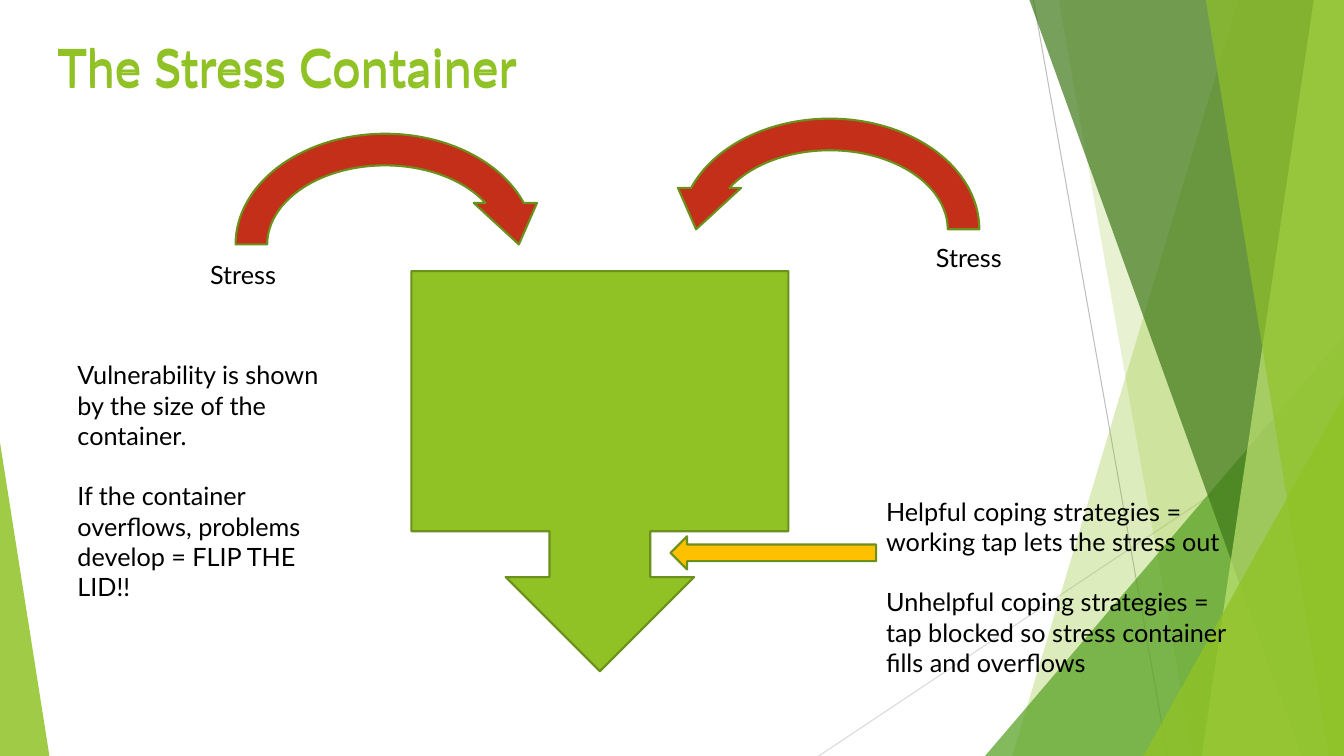
from pptx import Presentation
from pptx.dml.color import RGBColor
from pptx.enum.shapes import MSO_CONNECTOR, MSO_SHAPE
from pptx.enum.text import MSO_ANCHOR, MSO_AUTO_SIZE, PP_ALIGN
from pptx.oxml.ns import qn
from pptx.util import Inches, Pt
from lxml import etree

WIDTH, HEIGHT = 13.33, 7.5
FONT = "Lato"
GREEN, EDGE, RED, AMBER, BLACK = "90C226", "6B901C", "C42F1A", "FFC000", "000000"
LEFT, CENTER = PP_ALIGN.LEFT, PP_ALIGN.CENTER
TRIANGLE = MSO_SHAPE.ISOSCELES_TRIANGLE
CALLOUT = MSO_SHAPE.DOWN_ARROW_CALLOUT
CURVED_ARROW = MSO_SHAPE.CIRCULAR_ARROW
RIGHT_ARROW = MSO_SHAPE.RIGHT_ARROW

TITLE = "The Stress Container"
TITLE_BOX = (0.47, 0.33, 9.4, 1.44)
TITLE_OVERLAY = (0.47, 0.3, 9.4, 1.44)

# from, to, colour
RAYS = [
    ((10.25, 0), (11.58, HEIGHT), "BFBFBF"),
    ((WIDTH, 4.03), (8.12, HEIGHT), "D9D9D9"),
]
# Bands reach the right edge: x at the top, x at the bottom, colour, opacity
# Corners are triangles: place, apex, colour, opacity
BANDS_AND_CORNERS = [
    (12.28, 10.04, GREEN, 30),
    (10.5, 11.83, GREEN, 20),
    ((9.77, 3.33, 3.56, 4.17), 1, "54A021", 72),
    (10.21, 12.91, "3F7819", 70),
    (13.03, 11.92, "C0E474", 70),
    (11.96, 13.18, GREEN, 65),
    ((11.34, 3.93, 1.99, 3.57), 1, GREEN, 80),
    ((0, 4.39, 0.49, 3.11), 0, GREEN, 85),
]
# preset, place, colour, adjustments, mirrored
DIAGRAM = [
    (CALLOUT, (4.08, 2.69, 3.74, 3.97), GREEN, (0.267, 0.25, 0.25, 0.65), False),
    (CURVED_ARROW, (2.18, 1.17, 3.28, 2.51), RED, (), False),
    (CURVED_ARROW, (6.59, 1.02, 3.28, 2.51), RED, (), True),
    (RIGHT_ARROW, (6.65, 5.32, 2.04, 0.33), AMBER, (), True),
]
# place, alignment, wrap, paragraphs
LABELS = [
    ((1, 2.52, 2.82, 0.4), CENTER, True, ["Stress"]),
    ((9.18, 2.36, 0.86, 0.4), CENTER, False, ["Stress"]),
    ((8.69, 4.87, 3.62, 1.92), LEFT, True, [
        "Helpful coping strategies = working tap lets the stress out",
        "Unhelpful coping strategies = tap blocked so stress container fills and overflows",
    ]),
    ((0.67, 3.52, 2.88, 2.52), LEFT, True, [
        "Vulnerability is shown by the size of the container.",
        "If the container overflows, problems develop = FLIP THE LID!!",
    ]),
]


def color(value):
    return RGBColor.from_string(value)


def inches(place):
    return [Inches(length) for length in place]


def paint(shape, fill, opacity=100, edge=None):
    shape.shadow.inherit = False
    shape.fill.solid()
    shape.fill.fore_color.rgb = color(fill)
    if opacity < 100:
        srgb = shape._element.spPr.find(".//" + qn("a:srgbClr"))
        etree.SubElement(srgb, qn("a:alpha"), val=str(opacity * 1000))
    if edge:
        shape.line.color.rgb = color(edge)
        shape.line.width = Pt(1.5)
    else:
        shape.line.fill.background()


def write(box, lines, size, ink, align=LEFT, wrap=True):
    frame = box.text_frame
    frame.word_wrap = wrap
    frame.auto_size = MSO_AUTO_SIZE.NONE
    frame.vertical_anchor = MSO_ANCHOR.TOP
    for index, line in enumerate(lines):
        para = frame.add_paragraph() if index else frame.paragraphs[0]
        para.alignment = align
        para.space_before = Pt(size * 1.2 if index else 0)  # one empty line
        span = para.add_run()
        span.text = line
        span.font.name = FONT
        span.font.size = Pt(size)
        span.font.color.rgb = color(ink)


def add_ray(shapes, start, end, ink):
    ray = shapes.add_connector(MSO_CONNECTOR.STRAIGHT, *inches(start + end))
    ray.line.color.rgb = color(ink)
    ray.line.width = Pt(0.75)
    etree.SubElement(ray._element.spPr, qn("a:effectLst"))


def add_band(shapes, top, bottom):
    outline = shapes.build_freeform(Inches(top), 0)
    corners = [(WIDTH, 0), (WIDTH, HEIGHT), (bottom, HEIGHT)]
    outline.add_line_segments([inches(corner) for corner in corners], close=True)
    return outline.convert_to_shape()


def add_corner(shapes, place, apex):
    corner = shapes.add_shape(TRIANGLE, *inches(place))
    corner.adjustments[0] = apex
    return corner


def main():
    deck = Presentation()
    deck.slide_width, deck.slide_height = inches((WIDTH, HEIGHT))
    slide = deck.slides.add_slide(deck.slide_layouts[5])
    shapes = slide.shapes

    for start, end, ink in RAYS:
        add_ray(shapes, start, end, ink)
    for first, second, fill, opacity in BANDS_AND_CORNERS:
        add = add_corner if isinstance(first, tuple) else add_band
        paint(add(shapes, first, second), fill, opacity)

    title = shapes.title
    title.left, title.top, title.width, title.height = inches(TITLE_BOX)
    shapes._spTree.append(title._element)  # in front of the decoration
    overlay = shapes.add_textbox(*inches(TITLE_OVERLAY))
    for box in (title, overlay):
        write(box, [TITLE], 36, GREEN)

    for preset, place, fill, adjustments, mirrored in DIAGRAM:
        shape = shapes.add_shape(preset, *inches(place))
        for index, value in enumerate(adjustments):
            shape.adjustments[index] = value
        if mirrored:
            shape._element.spPr.find(qn("a:xfrm")).set("flipH", "1")
        paint(shape, fill, edge=EDGE)

    for place, align, wrap, lines in LABELS:
        write(shapes.add_textbox(*inches(place)), lines, 18, BLACK, align, wrap)

    deck.save("out.pptx")


if __name__ == "__main__":
    main()
